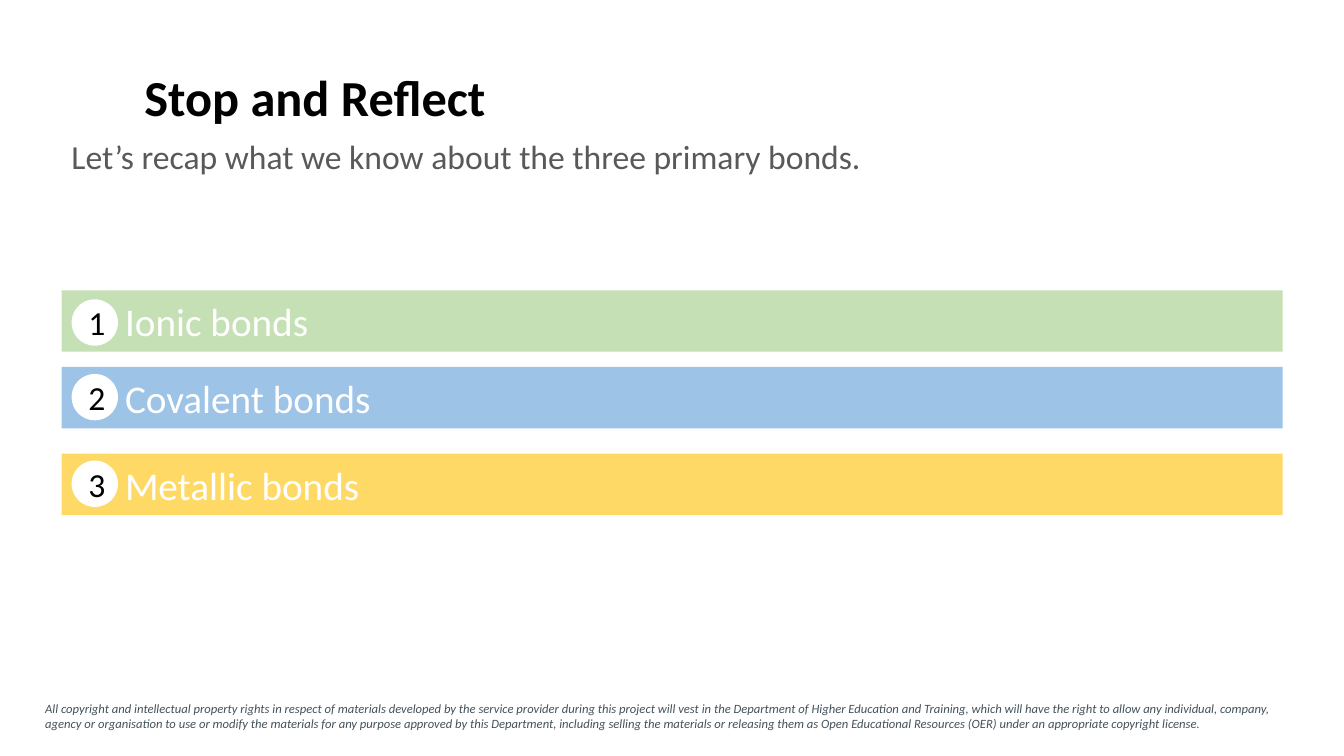
from pptx import Presentation
from pptx.dml.color import RGBColor
from pptx.enum.shapes import MSO_SHAPE as Shape
from pptx.enum.text import MSO_ANCHOR as Anchor, PP_ALIGN as Align
from pptx.util import Inches, Pt

BLACK = RGBColor(0x00, 0x00, 0x00)
WHITE = RGBColor(0xFF, 0xFF, 0xFF)
GRAY = RGBColor(0x59, 0x59, 0x59)
SLATE = RGBColor(0x43, 0x52, 0x5A)
GREEN = RGBColor(0xC5, 0xE0, 0xB4)
BLUE = RGBColor(0x9D, 0xC3, 0xE6)
YELLOW = RGBColor(0xFF, 0xD9, 0x66)

deck = Presentation()
deck.slide_width, deck.slide_height = Inches(13.33), Inches(7.5)
page = deck.slides.add_slide(deck.slide_layouts[6])


def add_box(left, top, width, height, preset=None, fill=None):
    column, row = deck.slide_width / 100, deck.slide_height / 100
    area = [int(left * column), int(top * row), int(width * column), int(height * row)]
    if preset is None:
        return page.shapes.add_textbox(*area)
    box = page.shapes.add_shape(preset, *area)
    box.shadow.inherit = False
    box.fill.solid()
    box.fill.fore_color.rgb = fill
    box.line.fill.background()
    return box


def write(box, text, size, color, anchor=Anchor.TOP, align=Align.LEFT):
    box.text_frame.word_wrap = True
    box.text_frame.vertical_anchor = anchor
    para = box.text_frame.paragraphs[0]
    para.alignment = align
    span = para.add_run()
    span.text = text
    span.font.name = "Calibri"
    span.font.size = Pt(size)
    span.font.color.rgb = color
    return para, span


notice = (
    "All copyright and intellectual property rights in respect of materials developed "
    "by the service provider during this project will vest in the Department of Higher "
    "Education and Training, which will have the right to allow any individual, company, "
    "agency or organisation to use or modify the materials for any purpose approved by "
    "this Department, including selling the materials or releasing them as Open "
    "Educational Resources (OER) under an appropriate copyright license."
)
para, span = write(add_box(2.63, 92, 94.67, 5.33), notice, 9, SLATE)
span.font.italic = True

title = add_box(10, 3.47, 62.5, 14)
para, span = write(title, "Stop and Reflect", 36, BLACK, Anchor.BOTTOM)
para.line_spacing = 0.9
span.font.bold = True

intro = add_box(4.58, 17.87, 92.12, 7.07)
para, span = write(intro, "Let’s recap what we know about the three primary bonds.", 24, GRAY)
para.line_spacing = 0.9
para.space_before = Pt(10)

bonds = [
    ("Ionic bonds", GREEN, 38.4, 39.6),
    ("Covalent bonds", BLUE, 48.53, 49.47),
    ("Metallic bonds", YELLOW, 60, 60.93),
]
for number, (name, color, bar_top, badge_top) in enumerate(bonds, 1):
    bar = add_box(4.58, bar_top, 90.85, 8.13, Shape.RECTANGLE, color)
    bar.text_frame.margin_left = Inches(0.63)
    write(bar, name, 28, WHITE, Anchor.MIDDLE)
    badge = add_box(5.33, badge_top, 3.45, 6.13, Shape.OVAL, WHITE)
    write(badge, str(number), 24, BLACK, Anchor.MIDDLE, Align.CENTER)

deck.save("out.pptx")
